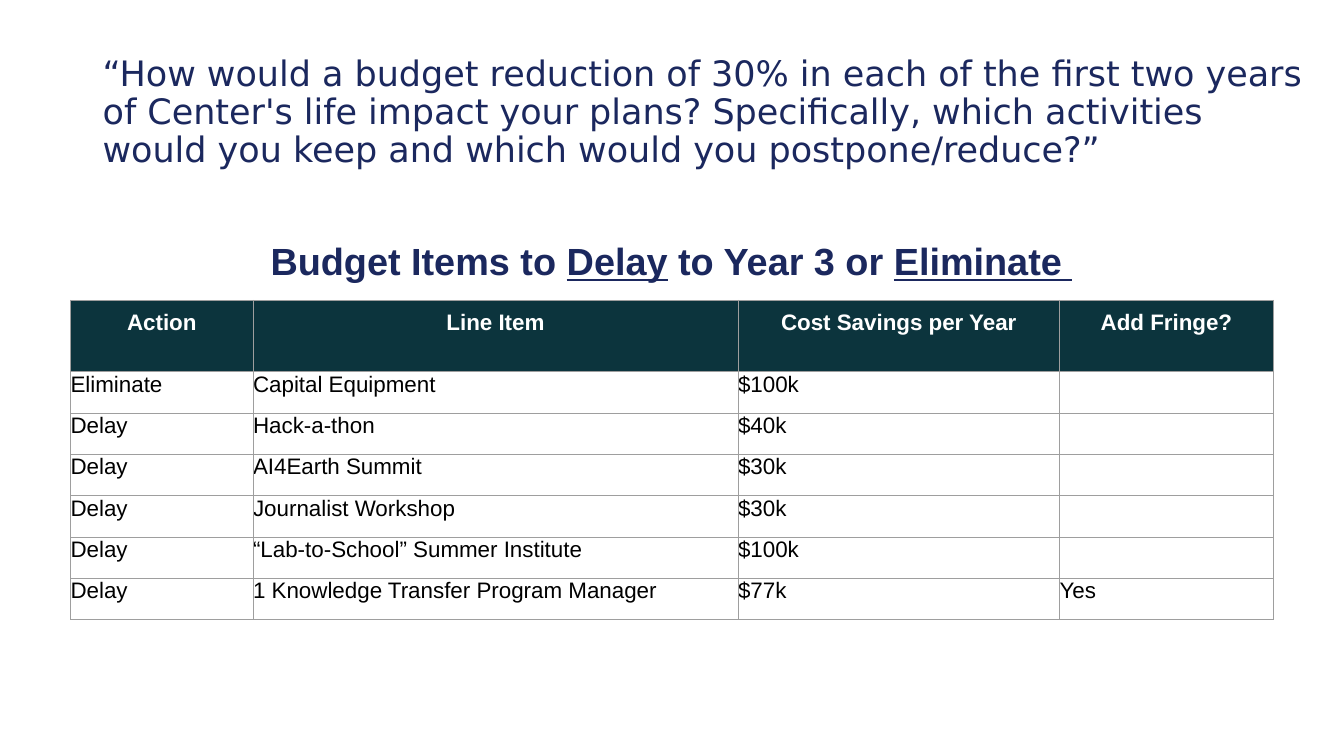
from lxml.etree import SubElement
from pptx import Presentation
from pptx.dml.color import RGBColor
from pptx.enum.text import MSO_ANCHOR, PP_ALIGN
from pptx.oxml.ns import qn
from pptx.util import Inches, Pt

NAVY, TEAL, GREY = "1B285E", "0C343D", "9E9E9E"


def rgb(value):
    return RGBColor.from_string(value)


def add_run(p, text, size=16, color="000000", font="Arial", bold=False, underline=False):
    r = p.add_run()
    r.text = text
    r.font.name, r.font.size = font, Pt(size)
    r.font.bold, r.font.underline = bold, underline
    r.font.color.rgb = rgb(color)


prs = Presentation()
prs.slide_width, prs.slide_height = Inches(13.33), Inches(7.5)
s = prs.slides.add_slide(prs.slide_layouts[6])

# Question
tf = s.shapes.add_textbox(Inches(0.92), Inches(0.4), Inches(12.2), Inches(1.45)).text_frame
tf.word_wrap = True
tf.vertical_anchor = MSO_ANCHOR.MIDDLE
p = tf.paragraphs[0]
p.line_spacing = 0.9
add_run(p, "“How would a budget reduction of 30% in each of the first two years of Center's life "
        "impact your plans? Specifically, which activities would you keep and which would you "
        "postpone/reduce?”", size=25, color=NAVY, font="DejaVu Sans")

# Budget table
rows = [
    ("Action", "Line Item", "Cost Savings per Year", "Add Fringe?"),
    ("Eliminate", "Capital Equipment", "$100k", ""),
    ("Delay", "Hack-a-thon", "$40k", ""),
    ("Delay", "AI4Earth Summit", "$30k", ""),
    ("Delay", "Journalist Workshop", "$30k", ""),
    ("Delay", "“Lab-to-School” Summer Institute", "$100k", ""),
    ("Delay", "1 Knowledge Transfer Program Manager", "$77k", "Yes"),
]
widths = [1.81, 4.81, 3.19, 2.12]
heights = [0.71] + [0.41] * (len(rows) - 1)
table = s.shapes.add_table(len(rows), len(widths), Inches(0.7), Inches(2.98),
                           Inches(sum(widths)), Inches(sum(heights))).table
table.first_row = table.horz_banding = False
for column, width in zip(table.columns, widths):
    column.width = Inches(width)

for i, values in enumerate(rows):
    table.rows[i].height = Inches(heights[i])
    header = i == 0
    for j, text in enumerate(values):
        cell = table.cell(i, j)
        margin = Inches(0.1 if header else 0)
        cell.margin_left = cell.margin_right = cell.margin_top = cell.margin_bottom = margin
        # Cell borders come before the fill
        for side in ("a:lnL", "a:lnR", "a:lnT", "a:lnB"):
            ln = SubElement(cell._tc.get_or_add_tcPr(), qn(side), w=str(Pt(0.75)))
            SubElement(SubElement(ln, qn("a:solidFill")), qn("a:srgbClr"), val=GREY)
        p = cell.text_frame.paragraphs[0]
        if header:
            cell.fill.solid()
            cell.fill.fore_color.rgb = rgb(TEAL)
            p.alignment = PP_ALIGN.CENTER
        else:
            cell.fill.background()
        if text:
            add_run(p, text, color="FFFFFF" if header else "000000", bold=header)
        else:
            p.font.size = Pt(16)

# Table heading
tf = s.shapes.add_textbox(Inches(1.4), Inches(2.26), Inches(10.52), Inches(0.59)).text_frame
tf.word_wrap = True
tf.margin_left = tf.margin_right = tf.margin_top = tf.margin_bottom = Inches(0.1)
p = tf.paragraphs[0]
p.alignment = PP_ALIGN.CENTER
for text, underline in [("Budget Items to ", False), ("Delay", True),
                        (" to Year 3 or ", False), ("Eliminate ", True)]:
    add_run(p, text, size=27, color=NAVY, bold=True, underline=underline)

prs.save("out.pptx")
